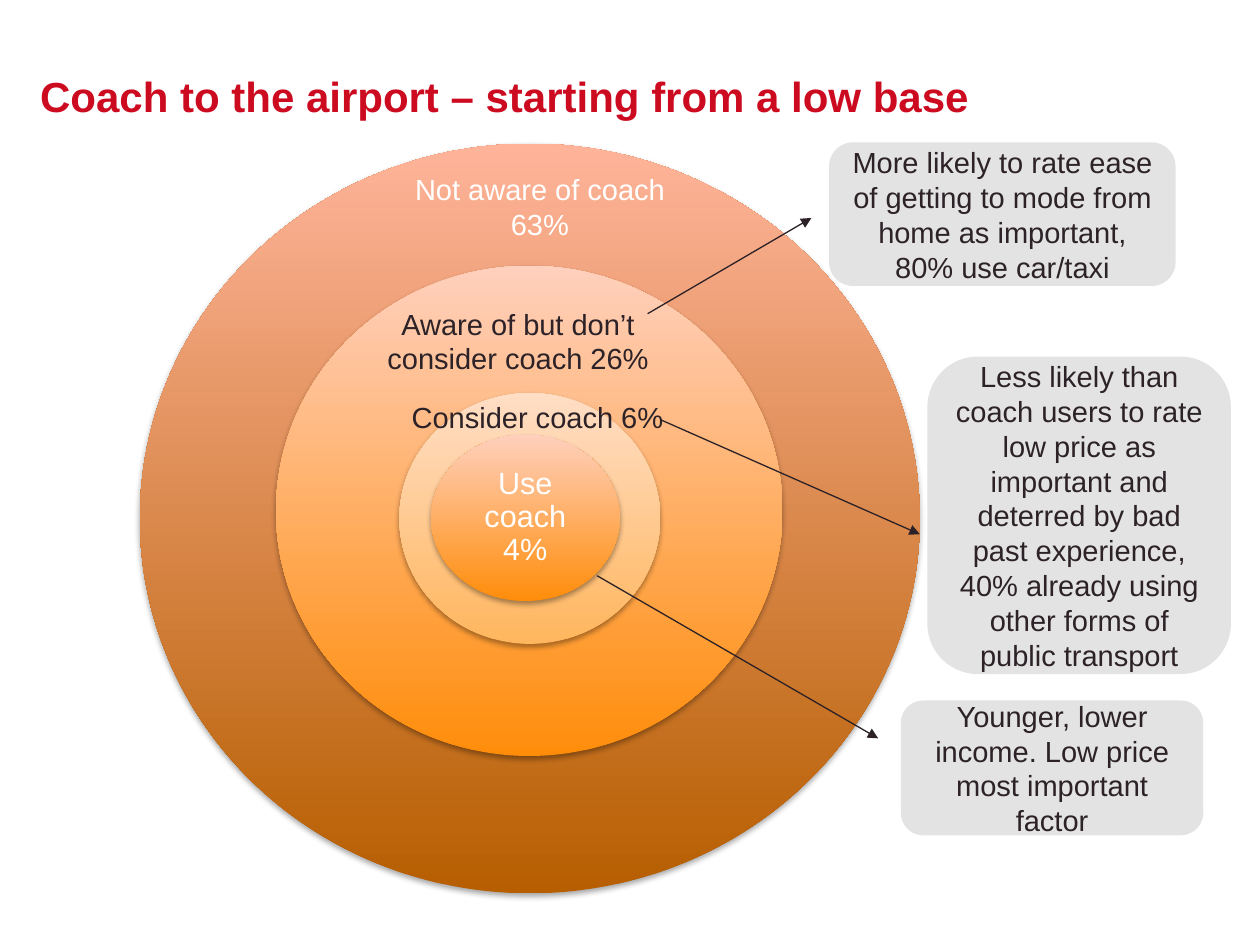
from pptx import Presentation
from pptx.dml.color import RGBColor
from pptx.enum.shapes import MSO_CONNECTOR, MSO_SHAPE
from pptx.enum.text import MSO_ANCHOR, PP_ALIGN
from pptx.oxml.ns import qn
from pptx.util import Pt
from lxml.etree import SubElement

PX = 9144  # EMU per px, 100 px to the inch
THEME = {
    "font": "Arial",
    "title": "CC0A20", "dark": "2C2227", "light": "FFFFFF",
    "arrow": "2B2126", "callout": "E3E3E3",
    "title_size": 24, "label_size": 16.6, "core_size": 17.5,
}


def write(box, text, color, size, margins, **formats):
    frame = box.text_frame
    left, top, right, bottom = [round(value * PX) for value in margins]
    settings = {"word_wrap": True, "margin_left": left, "margin_top": top,
                "margin_right": right, "margin_bottom": bottom,
                "vertical_anchor": formats.pop("anchor", MSO_ANCHOR.TOP)}
    for name, value in settings.items():
        setattr(frame, name, value)
    para = frame.paragraphs[0]
    for name, value in ({"alignment": PP_ALIGN.CENTER} | formats).items():
        setattr(para, name, value)
    span = para.add_run()
    span.text = text
    span.font.name = THEME["font"]
    span.font.size = Pt(THEME[size])
    span.font.bold = size == "title_size"
    span.font.color.rgb = RGBColor.from_string(THEME[color])


def scaled(*lengths):
    return [length * PX for length in lengths]


deck = Presentation()
deck.slide_width, deck.slide_height = scaled(1000, 750)
page = deck.slides.add_slide(deck.slide_layouts[6])
shapes = page.shapes

# Title
title = shapes.add_textbox(*scaled(22, 51, 955, 50))
write(title, "Coach to the airport – starting from a low base", "title",
      "title_size", (10, 5, 0, 5), alignment=PP_ALIGN.LEFT)

# Nested circles, outermost first: bounds, bottom colour, top colour
rings = [
    ((111, 114, 619, 595), "B65E00", "FFB49A"),
    ((219, 211, 402, 389), "FF8D0A", "FFD0BD"),
    ((317, 312, 207, 199), "FFB65E", "FFDEC5"),
    ((342, 345, 150, 132), "FF8D0A", "FFD0BD"),
]
for bounds, *colors in rings:
    ring = shapes.add_shape(MSO_SHAPE.OVAL, *scaled(*bounds))
    ring.line.fill.background()
    ring.fill.gradient()
    ring.fill.gradient_angle = 90
    for stop, color in zip(ring.fill.gradient_stops, colors):
        stop.color.rgb = RGBColor.from_string(color)
    effects = SubElement(ring._element.spPr, qn("a:effectLst"))
    shadow = SubElement(effects, qn("a:outerShdw"), blurRad=str(Pt(3.1)),
                        dist=str(Pt(1.8)), dir="5400000", rotWithShape="0")
    shade = SubElement(shadow, qn("a:srgbClr"), val="000000")
    SubElement(shade, qn("a:alpha"), val="35000")

# The innermost circle carries its own label
write(ring, "Use coach 4%", "light", "core_size", (19, 0, 19, 0),
      anchor=MSO_ANCHOR.MIDDLE, line_spacing=0.9)

# Circle labels
labels = [
    ((290, 312, 273, 38), "Consider coach 6%", "dark"),
    ((289, 238, 244, 66), "Aware of but don’t consider coach 26%", "dark"),
    ((316, 131, 225, 66), "Not aware of coach 63%", "light"),
]
for bounds, text, color in labels:
    label = shapes.add_textbox(*scaled(*bounds))
    write(label, text, color, "label_size", (11, 5, 11, 5))

# Callouts with the arrow that leads to each
callouts = [
    ((715, 556, 240, 107), (474, 457, 697, 586),
     "Younger, lower income. Low price most important factor"),
    ((736, 283, 241, 252), (524, 333, 730, 424),
     "Less likely than coach users to rate low price as important and "
     "deterred by bad past experience, 40% already using other forms of "
     "public transport"),
    ((658, 113, 275, 114), (514, 249, 644, 173),
     "More likely to rate ease of getting to mode from home as important, "
     "80% use car/taxi"),
]
for bounds, ends, text in callouts:
    arrow = shapes.add_connector(MSO_CONNECTOR.STRAIGHT, *scaled(*ends))
    arrow.line.color.rgb = RGBColor.from_string(THEME["arrow"])
    arrow.line.width = Pt(0.75)
    SubElement(arrow.line._get_or_add_ln(), qn("a:tailEnd"), type="triangle")
    SubElement(arrow._element.spPr, qn("a:effectLst"))

    callout = shapes.add_shape(MSO_SHAPE.ROUNDED_RECTANGLE, *scaled(*bounds))
    callout.shadow.inherit = False
    callout.fill.solid()
    callout.fill.fore_color.rgb = RGBColor.from_string(THEME["callout"])
    callout.line.fill.background()
    write(callout, text, "dark", "label_size", (9, 5, 9, 5),
          anchor=MSO_ANCHOR.MIDDLE)

deck.save("out.pptx")
